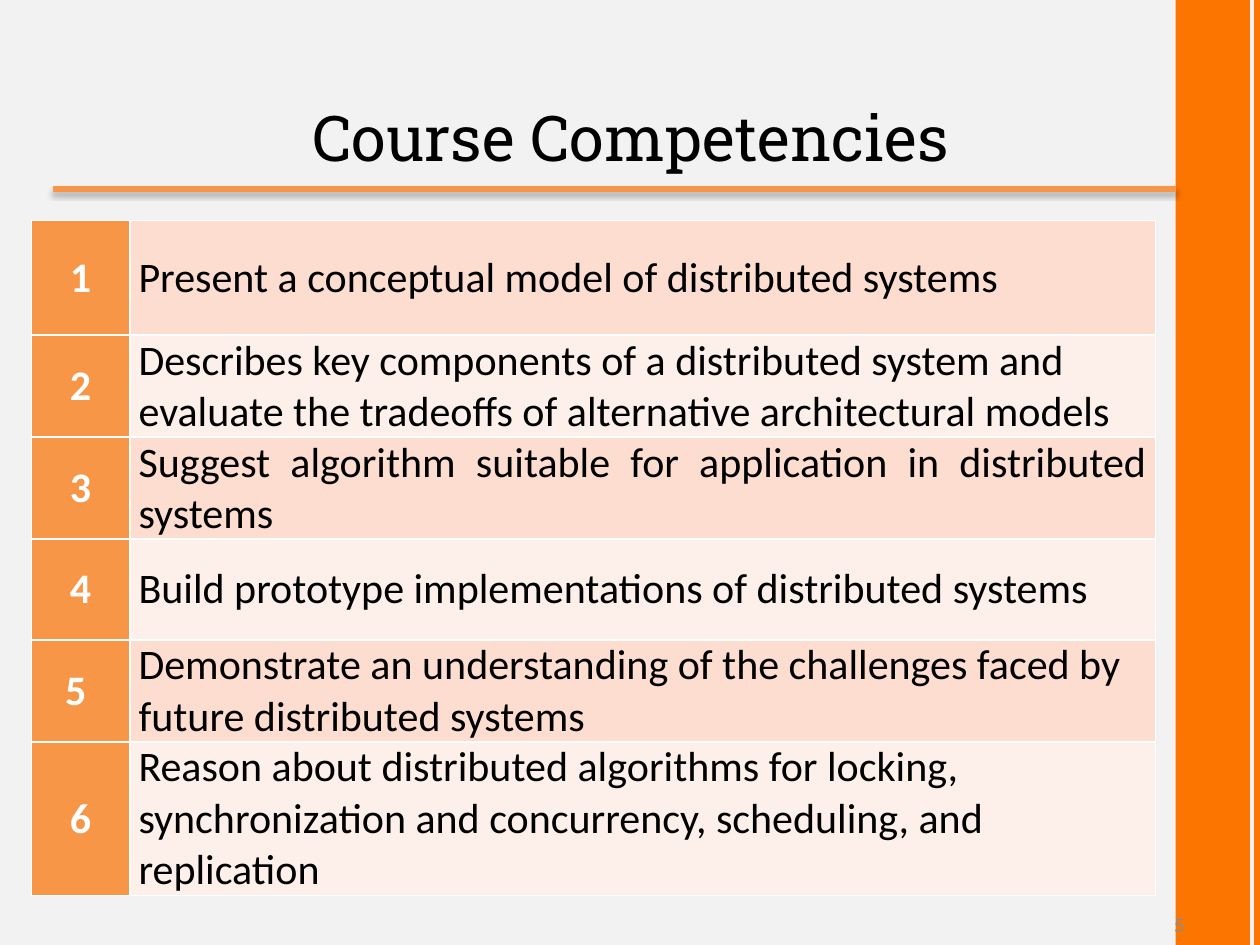
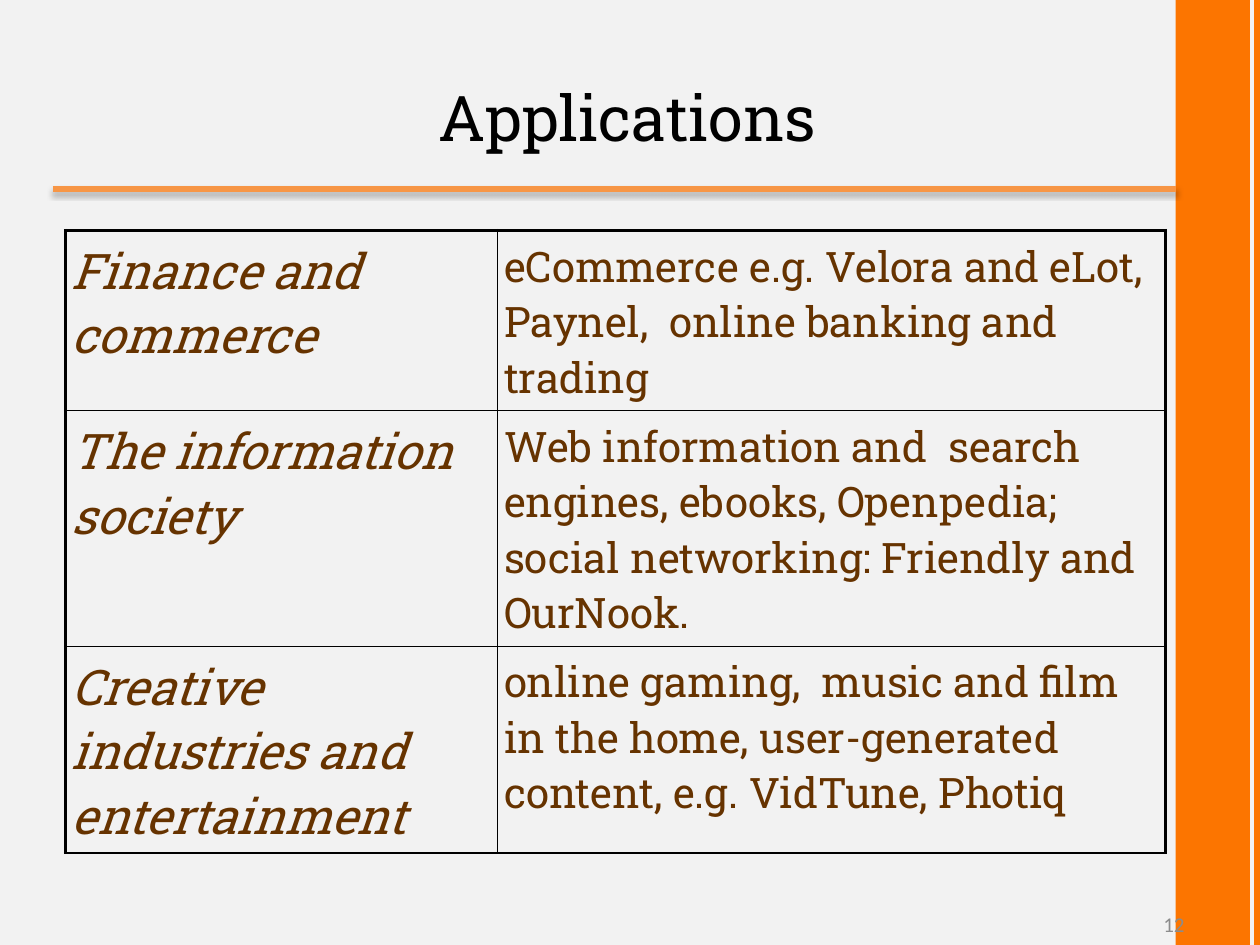
from pptx import Presentation
from pptx.dml.color import RGBColor
from pptx.enum.shapes import MSO_CONNECTOR, MSO_SHAPE
from pptx.enum.text import MSO_ANCHOR, MSO_AUTO_SIZE, PP_ALIGN
from pptx.oxml import parse_xml
from pptx.oxml.ns import nsdecls
from pptx.util import Inches, Pt

# Palette and fonts
PAPER = RGBColor(0xF2, 0xF2, 0xF2)
BAND = RGBColor(0xFC, 0x75, 0x00)
AMBER = RGBColor(0xF7, 0x96, 0x46)
PEACH = RGBColor(0xFC, 0xDD, 0xCF)
CREAM = RGBColor(0xFD, 0xEF, 0xE9)
BROWN = RGBColor(0x66, 0x33, 0x00)
GREY = RGBColor(0x8C, 0x8C, 0x8C)
BLACK = RGBColor(0, 0, 0)
WHITE = RGBColor(255, 255, 255)
SLAB, SANS = "Roboto Slab", "Calibri"

GOALS = [
    ("1", "Present a conceptual model of distributed systems", 0.91),
    ("2", "Describes key components of a distributed system and evaluate "
          "the tradeoffs of alternative architectural models", 0.81),
    ("3", "Suggest algorithm suitable for application in distributed systems", 0.81),
    ("4", "Build prototype implementations of distributed systems", 0.8),
    ("5 ", "Demonstrate an understanding of the challenges faced by "
           "future distributed systems", 0.81),
    ("6", "Reason about distributed algorithms for locking, synchronization "
          "and concurrency, scheduling, and replication", 1.22),
]
USES = [
    ("Finance and commerce",
     "eCommerce e.g. Velora and eLot, Paynel,  online banking and trading", 1.43),
    ("The information society",
     "Web information and  search engines, ebooks, Openpedia; "
     "social networking: Friendly and OurNook.", 1.87),
    ("Creative industries and entertainment",
     "online gaming,  music and film in the home, user-generated content, "
     "e.g. VidTune, Photiq", 1.64),
]


def write(frame, text, size=24, font=SANS, color=BLACK, bold=False,
          italic=False, align=PP_ALIGN.LEFT):
    frame.word_wrap = True
    para = frame.paragraphs[0]
    para.alignment = align
    run = para.add_run()
    run.text = text
    face = run.font
    face.size, face.name, face.bold, face.italic = Pt(size), font, bold, italic
    face.color.rgb = color


class Deck:
    def __init__(self):
        self.prs = Presentation()
        self.prs.slide_width, self.prs.slide_height = Inches(10), Inches(7.5)
        fill = self.prs.slide_master.background.fill
        fill.solid()
        fill.fore_color.rgb = PAPER
        self.slide = None

    def page(self, title, number, box, right=0.1):
        """Start a slide with its title, bands, rule and page number."""
        self.slide = self.prs.slides.add_slide(self.prs.slide_layouts[5])
        self.band(9.33, 0, 0.59, 7.5)
        self.line((9.98, 0), (9.98, 7.5), BAND, 4)
        self.line((0.42, 1.5), (9.33, 1.5), AMBER, 3, shadow=True)
        self.title(title, box, right)
        self.label(number, (7.17, 7.17, 2.33, 0.33))

    def title(self, text, box, right):
        head = self.slide.shapes.title
        head.left, head.top, head.width, head.height = map(Inches, box)
        frame = head.text_frame
        frame.auto_size = MSO_AUTO_SIZE.NONE
        frame.vertical_anchor = MSO_ANCHOR.MIDDLE
        frame.margin_right = Inches(right)
        write(frame, text, size=36, font=SLAB, align=PP_ALIGN.CENTER)

    def label(self, text, box):
        frame = self.slide.shapes.add_textbox(*map(Inches, box)).text_frame
        frame.vertical_anchor = MSO_ANCHOR.MIDDLE
        write(frame, text, size=12, color=GREY, align=PP_ALIGN.RIGHT)

    def band(self, *box):
        rect = self.slide.shapes.add_shape(MSO_SHAPE.RECTANGLE, *map(Inches, box))
        rect.shadow.inherit = False
        rect.fill.solid()
        rect.fill.fore_color.rgb = BAND
        rect.line.fill.background()

    def line(self, start, end, color, width, shadow=False):
        rule = self.slide.shapes.add_connector(
            MSO_CONNECTOR.STRAIGHT, *map(Inches, start + end))
        rule.line.color.rgb = color
        rule.line.width = Pt(width)
        glow = (f'<a:outerShdw blurRad="{Pt(3.1)}" dist="{Pt(1.8)}" dir="5400000" '
                'rotWithShape="0"><a:srgbClr val="000000"><a:alpha val="35000"/>'
                '</a:srgbClr></a:outerShdw>') if shadow else ""
        rule._element.spPr.append(parse_xml(
            f'<a:effectLst {nsdecls("a")}>{glow}</a:effectLst>'))

    def table(self, left, top, cols, rows):
        """Add a plain table with the given column widths and row heights."""
        box = map(Inches, (left, top, sum(cols), sum(rows)))
        grid = self.slide.shapes.add_table(len(rows), len(cols), *box).table
        grid.first_row = grid.horz_banding = False
        for col, width in zip(grid.columns, cols):
            col.width = Inches(width)
        for row, height in zip(grid.rows, rows):
            row.height = Inches(height)
        return grid

    def cell(self, cell, text, edges, ink, pad, fill=None,
             anchor=MSO_ANCHOR.TOP, **style):
        """Fill one cell; edges are the left, right, top, bottom widths."""
        props = cell._tc.get_or_add_tcPr()
        for side, width in zip("LRTB", edges):
            props.append(parse_xml(
                f'<a:ln{side} {nsdecls("a")} w="{Pt(width)}"><a:solidFill>'
                f'<a:srgbClr val="{ink}"/></a:solidFill></a:ln{side}>'))
        if fill is None:
            cell.fill.background()
        else:
            cell.fill.solid()
            cell.fill.fore_color.rgb = fill
        cell.margin_left = cell.margin_right = Inches(pad[0])
        cell.margin_top = cell.margin_bottom = Inches(pad[1])
        cell.vertical_anchor = anchor
        write(cell.text_frame, text, **style)


def goals(deck):
    deck.page("Course Competencies", "5", (0.62, 0.58, 8.77, 1))
    grid = deck.table(0.25, 1.75, (0.78, 8.14), [goal[2] for goal in GOALS])
    base = dict(edges=(1, 1, 1, 1), ink=WHITE, pad=(0.07, 0),
                anchor=MSO_ANCHOR.MIDDLE)
    for i, (mark, text, _) in enumerate(GOALS):
        deck.cell(grid.cell(i, 0), mark, fill=AMBER, color=WHITE, bold=True,
                  align=PP_ALIGN.CENTER, **base)
        deck.cell(grid.cell(i, 1), text, fill=CREAM if i % 2 else PEACH,
                  align=PP_ALIGN.JUSTIFY if mark == "3" else PP_ALIGN.LEFT,
                  **base)


def uses(deck):
    deck.page("Applications", "12", (0.5, 0.3, 9, 1.25), right=0.14)
    grid = deck.table(0.52, 1.83, (3.43, 5.3), [use[2] for use in USES])
    base = dict(ink=BLACK, pad=(0.05, 0.06), font=SLAB, color=BROWN)
    for i, (field, text, _) in enumerate(USES):
        top = 1 if i else 2.25
        deck.cell(grid.cell(i, 0), field, edges=(2.25, 1, top, 1),
                  size=28, italic=True, **base)
        deck.cell(grid.cell(i, 1), text, edges=(1, 2.25, top, 1), **base)


def main():
    deck = Deck()
    goals(deck)
    uses(deck)
    deck.prs.save("out.pptx")


if __name__ == "__main__":
    main()
